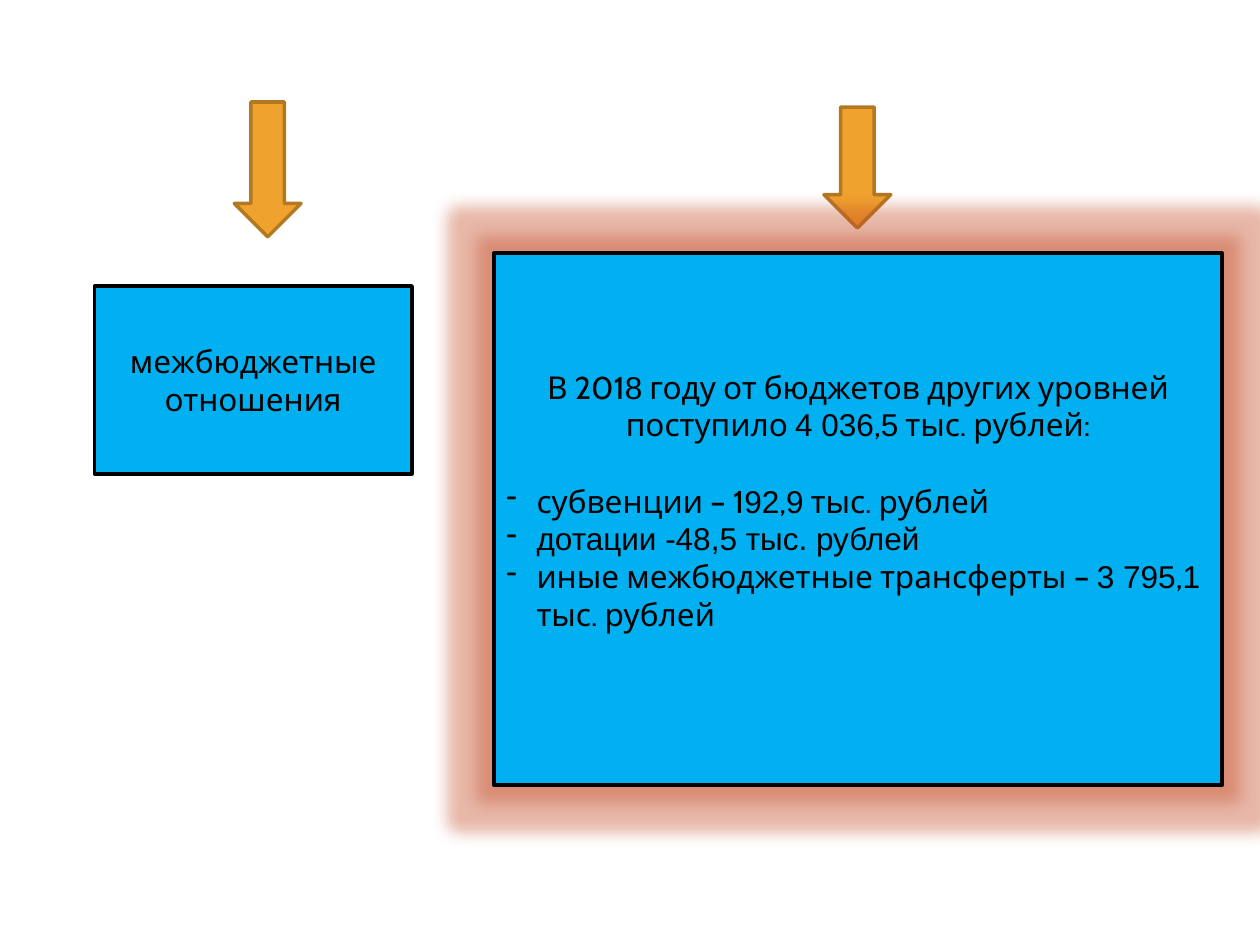
from lxml.etree import SubElement
from pptx import Presentation
from pptx.dml.color import RGBColor
from pptx.enum.shapes import MSO_SHAPE
from pptx.enum.text import MSO_ANCHOR, PP_ALIGN
from pptx.oxml.ns import qn
from pptx.util import Inches, Pt

ORANGE, BROWN, BLUE, BLACK, GLOW = "F0A22E", "B27822", "00B0F0", "000000", "C54D27"

# Each paragraph is a list of (text, font) pieces
RELATIONS = [("межбюджетные отношения", "Cabin")]
INCOME = [("В 201", "Cabin"), ("8", "Arial"),
          (" году от бюджетов других уровней поступило ", "Cabin"),
          ("4 036", "Arial"), (",", "Cabin"), ("5", "Arial"),
          (" тыс. рублей:", "Cabin")]
TRANSFERS = [
    [("субвенции – 1", "Cabin"), ("92", "Arial"), (",", "Cabin"),
     ("9", "Arial"), (" тыс. рублей", "Cabin")],
    [("дотации -48,5 тыс. рублей", "Arial")],
    [("иные межбюджетные трансферты – ", "Cabin"), ("3 795", "Arial"),
     (",", "Cabin"), ("1", "Arial"), (" тыс. рублей", "Cabin")],
]


def color(value):
    return RGBColor.from_string(value)


def add_block(page, kind, place, fill, line):
    """Add a filled, outlined shape without a shadow."""
    block = page.shapes.add_shape(kind, *(Inches(length) for length in place))
    block.shadow.inherit = False
    block.fill.solid()
    block.fill.fore_color.rgb = color(fill)
    block.line.color.rgb = color(line)
    block.line.width = Pt(2)
    return block


def add_box(page, place):
    box = add_block(page, MSO_SHAPE.RECTANGLE, place, BLUE, BLACK)
    box.text_frame.word_wrap = True
    box.text_frame.vertical_anchor = MSO_ANCHOR.MIDDLE
    return box


def write(para, pieces, align=PP_ALIGN.CENTER):
    para.alignment = align
    for text, font in pieces:
        span = para.add_run()
        span.text = text
        for name, value in {"name": font, "size": Pt(18)}.items():
            setattr(span.font, name, value)
        span.font.color.rgb = color(BLACK)


def add_dash(para):
    """Give the paragraph a dash bullet with a hanging indent."""
    properties = para._p.get_or_add_pPr()
    indent = Inches(0.24)
    properties.set("marL", str(indent))
    properties.set("indent", str(-indent))
    SubElement(properties, qn("a:buFontTx"))
    SubElement(properties, qn("a:buChar"), char="-")


def add_glow(box):
    effects = box._element.spPr.find(qn("a:effectLst"))
    glow = SubElement(effects, qn("a:glow"), rad=str(Pt(18)))
    tint = SubElement(glow, qn("a:srgbClr"), val=GLOW)
    SubElement(tint, qn("a:alpha"), val="40000")


def main():
    deck = Presentation()
    deck.slide_width, deck.slide_height = Inches(10), Inches(7.5)
    page = deck.slides.add_slide(deck.slide_layouts[6])

    # Arrows
    for place in ((1.86, 0.81, 0.53, 1.07), (6.54, 0.85, 0.53, 0.96)):
        add_block(page, MSO_SHAPE.DOWN_ARROW, place, ORANGE, BROWN)

    # Left box: topic
    topic = add_box(page, (0.75, 2.27, 2.52, 1.49))
    write(topic.text_frame.paragraphs[0], RELATIONS)

    # Right box: total received and its parts
    details = add_box(page, (3.92, 2.01, 5.78, 4.22))
    add_glow(details)
    frame = details.text_frame
    frame.margin_bottom = Inches(0.35)
    write(frame.paragraphs[0], INCOME)
    frame.paragraphs[0].space_after = Pt(22)
    for pieces in TRANSFERS:
        para = frame.add_paragraph()
        write(para, pieces, PP_ALIGN.LEFT)
        add_dash(para)

    deck.save("out.pptx")


if __name__ == "__main__":
    main()
